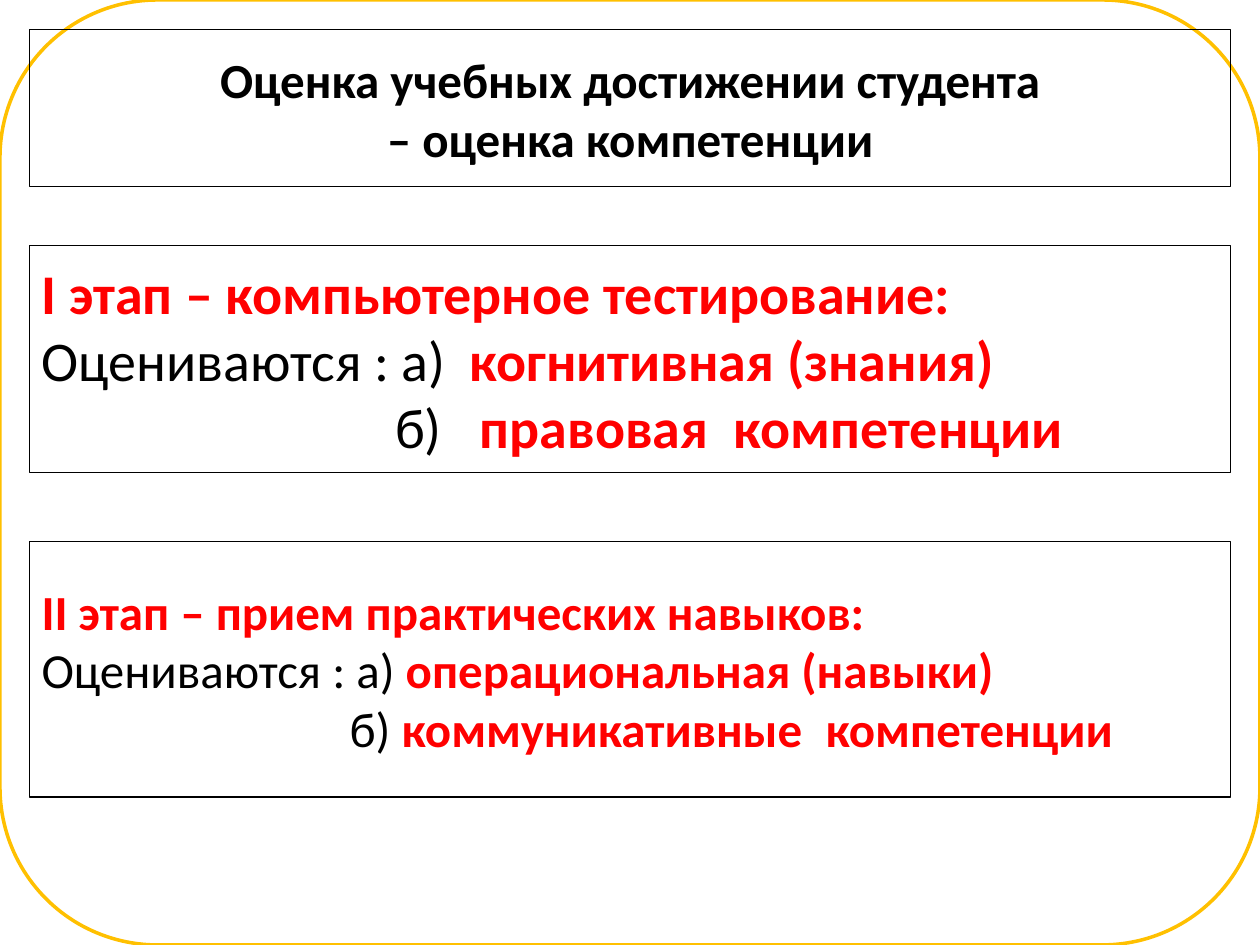
"""Build the slide on the two stages of student assessment."""
from typing import NamedTuple

from lxml import etree
from pptx import Presentation
from pptx.dml.color import RGBColor
from pptx.enum.shapes import MSO_SHAPE
from pptx.enum.text import MSO_ANCHOR, PP_ALIGN
from pptx.oxml.ns import qn
from pptx.util import Pt

BLACK = RGBColor(0, 0, 0)
WHITE = RGBColor(255, 255, 255)
RED = RGBColor(255, 0, 0)
GOLD = RGBColor(255, 192, 0)
RECT = MSO_SHAPE.RECTANGLE
ROUND = MSO_SHAPE.ROUNDED_RECTANGLE
MIDDLE = MSO_ANCHOR.MIDDLE
LEFT, CENTER, JUSTIFY = PP_ALIGN.LEFT, PP_ALIGN.CENTER, PP_ALIGN.JUSTIFY
WIDTH, HEIGHT = 720, 540
EDGE = 16.7


class Piece(NamedTuple):
    text: str
    color: RGBColor = BLACK
    bold: bool = False


class Line(NamedTuple):
    pieces: list[Piece]
    tabs: tuple[float, ...] = ()


class Box(NamedTuple):
    top: float
    height: float
    size: float
    align: PP_ALIGN
    lines: list[Line]


def strong(text: str) -> Piece:
    return Piece(text, RED, True)


BOXES = [
    Box(140.5, 129.5, 32, JUSTIFY, [
        Line([strong("I этап – компьютерное тестирование:")]),
        Line([Piece("Оцениваются : а)\t"), strong("когнитивная (знания)")], (244.5,)),
        Line([Piece("\tб)\t"), strong("правовая\tкомпетенции")], (202, 250.5, 395.5)),
    ]),
    Box(16.7, 90, 28, CENTER, [
        Line([Piece("Оценка учебных достижении студента", BLACK, True)]),
        Line([Piece("– оценка компетенции", BLACK, True)]),
    ]),
    Box(309.5, 146, 28, LEFT, [
        Line([strong("II этап – прием практических навыков:")]),
        Line([Piece("Оцениваются : а) "), strong("операциональная (навыки)")]),
        Line([Piece("\tб) "), strong("коммуникативные\tкомпетенции")], (176, 448)),
    ]),
]


def add_frame(slide) -> None:
    frame = slide.shapes.add_shape(ROUND, 0, 0, Pt(WIDTH), Pt(HEIGHT))
    frame.shadow.inherit = False
    frame.fill.solid()
    frame.fill.fore_color.rgb = WHITE
    frame.line.color.rgb = GOLD
    frame.line.width = Pt(2)


def set_tabs(para, tabs: tuple[float, ...]) -> None:
    stops = etree.SubElement(para._p.get_or_add_pPr(), qn("a:tabLst"))
    for tab in tabs:
        etree.SubElement(stops, qn("a:tab"), pos=str(Pt(tab)), algn="l")


def set_look(font, piece: Piece) -> None:
    font.bold = piece.bold
    font.color.rgb = piece.color


def fill_line(para, line: Line, box: Box) -> None:
    para.alignment = box.align
    if line.tabs:
        set_tabs(para, line.tabs)
    para.font.name = "Calibri"
    para.font.size = Pt(box.size)
    set_look(para.font, line.pieces[0])
    for piece in line.pieces:
        run = para.add_run()
        run.text = piece.text
        if len(line.pieces) > 1:
            set_look(run.font, piece)


def add_box(slide, box: Box) -> None:
    shape = slide.shapes.add_shape(
        RECT, Pt(EDGE), Pt(box.top), Pt(WIDTH - 2 * EDGE), Pt(box.height))
    shape.shadow.inherit = False
    shape.fill.background()
    shape.line.color.rgb = BLACK
    shape.line.width = Pt(0.75)
    text = shape.text_frame
    text.word_wrap = True
    text.vertical_anchor = MIDDLE
    for index, line in enumerate(box.lines):
        para = text.add_paragraph() if index else text.paragraphs[0]
        fill_line(para, line, box)


def main() -> None:
    deck = Presentation()
    deck.slide_width, deck.slide_height = Pt(WIDTH), Pt(HEIGHT)
    slide = deck.slides.add_slide(deck.slide_layouts[6])
    add_frame(slide)
    for box in BOXES:
        add_box(slide, box)
    deck.save("out.pptx")


if __name__ == "__main__":
    main()
